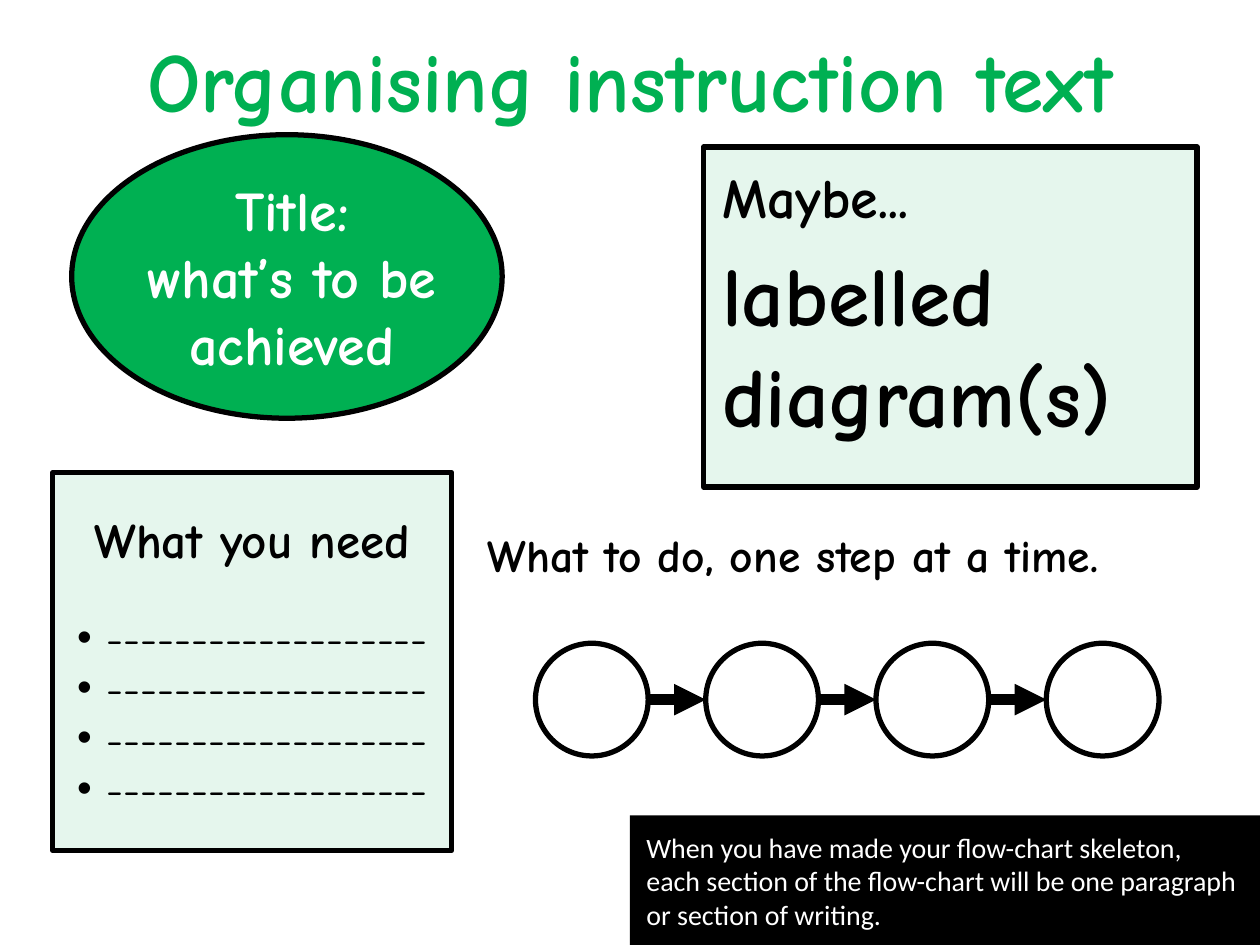
from pptx import Presentation
from pptx.dml.color import RGBColor
from pptx.enum.shapes import MSO_CONNECTOR, MSO_SHAPE
from pptx.enum.text import MSO_ANCHOR, PP_ALIGN
from pptx.oxml.ns import qn
from pptx.util import Pt
from lxml.etree import SubElement

GREEN, BLACK, WHITE = "00B052", "000000", "FFFFFF"
COMIC, BODY = "Comic Neue", "Calibri"

TITLE = "Organising instruction text"
NEEDS = ["What you need"] + ["-------------------"] * 4
NEEDS_BOX = (30.2, 270, 228, 216)
PANELS = [
    (MSO_SHAPE.OVAL, (41, 77, 246, 162), GREEN, 100, 3),
    (MSO_SHAPE.RECTANGLE, (402, 84, 282, 194.4), GREEN, 10, 3),
    (MSO_SHAPE.RECTANGLE, (360, 466, 360, 74), BLACK, 100, 0),
]
TEXTS = [
    ((278.6, 301, 427, 31), ["What to do, one step at a time."], [26], COMIC, BLACK, PP_ALIGN.LEFT),
    ((46.8, 100, 240, 115), ["Title:", "what’s to be achieved"], [32, 32], COMIC, WHITE, PP_ALIGN.CENTER),
    ((412.6, 93, 263.5, 162), ["Maybe...", "labelled", "diagram(s)"], [32, 48, 48], COMIC, BLACK, PP_ALIGN.LEFT),
    ((369.4, 474.5, 346, 57.6), ["When you have made your flow-chart skeleton,",
     "each section of the flow-chart will be one paragraph or section of writing."],
     [16, 16], BODY, WHITE, PP_ALIGN.LEFT),
]
STEPS, STEP_LEFT, STEP_TOP, STEP_SIZE, STEP_PITCH = 4, 306, 367.6, 64.4, 97.3


def colour(value):
    return RGBColor.from_string(value)


def points(box):
    return [Pt(length) for length in box]


def add_panel(slide, kind, box, fill, opacity, line_width):
    shape = slide.shapes.add_shape(kind, *points(box))
    shape.shadow.inherit = False
    if fill:
        shape.fill.solid()
        shape.fill.fore_color.rgb = colour(fill)
        if opacity < 100:
            solid = shape.fill._xPr.find(qn("a:solidFill"))
            SubElement(solid[0], qn("a:alpha")).set("val", str(opacity * 1000))
    else:
        shape.fill.background()
    if line_width:
        shape.line.color.rgb = colour(BLACK)
        shape.line.width = Pt(line_width)
    else:
        shape.line.fill.background()
    return shape


def write(text_frame, lines, sizes, font_name, font_colour, alignment):
    text_frame.text = "\n".join(lines)
    for paragraph, size in zip(text_frame.paragraphs, sizes):
        paragraph.alignment = alignment
        for run in paragraph.runs:
            run.font.name = font_name
            run.font.size = Pt(size)
            run.font.bold = font_name == COMIC
            run.font.color.rgb = colour(font_colour)


def add_text(slide, box, *content):
    text_frame = slide.shapes.add_textbox(*points(box)).text_frame
    text_frame.word_wrap = True
    text_frame.margin_left = text_frame.margin_right = 0
    text_frame.margin_top = text_frame.margin_bottom = 0
    write(text_frame, *content)
    return text_frame


def add_needs(slide):
    shape = add_panel(slide, MSO_SHAPE.RECTANGLE, NEEDS_BOX, GREEN, 10, 3)
    text_frame = shape.text_frame
    text_frame.word_wrap = False
    text_frame.vertical_anchor = MSO_ANCHOR.MIDDLE
    write(text_frame, NEEDS, [28] + [24] * 4, COMIC, BLACK, PP_ALIGN.CENTER)
    items = text_frame.paragraphs[1:]
    items[0].line_spacing = 1.85
    for paragraph in items:
        paragraph.runs[0].font.bold = False
        properties = paragraph._p.get_or_add_pPr()
        properties.set("marL", str(Pt(17)))
        properties.set("indent", str(-Pt(17)))
        SubElement(properties, qn("a:buFont")).set("typeface", "Arial")
        SubElement(properties, qn("a:buChar")).set("char", "•")


def add_steps(slide):
    middle = STEP_TOP + STEP_SIZE / 2
    for step in range(STEPS):
        left = STEP_LEFT + step * STEP_PITCH
        if step < STEPS - 1:
            ends = (left + STEP_SIZE, middle, left + STEP_PITCH, middle)
            arrow = slide.shapes.add_connector(MSO_CONNECTOR.STRAIGHT, *points(ends))
            arrow.line.color.rgb = colour(BLACK)
            arrow.line.width = Pt(6)
            SubElement(arrow.line._get_or_add_ln(), qn("a:tailEnd")).set("type", "triangle")
            SubElement(arrow._element.spPr, qn("a:effectLst"))
        add_panel(slide, MSO_SHAPE.OVAL, (left, STEP_TOP, STEP_SIZE, STEP_SIZE), None, 100, 3)


def main():
    """Build the slide on organising instruction text."""
    presentation = Presentation()
    presentation.slide_width, presentation.slide_height = Pt(720), Pt(540)
    slide = presentation.slides.add_slide(presentation.slide_layouts[5])
    title = slide.shapes.title
    title.left, title.top, title.width, title.height = points((36, 0, 648, 90))
    title.text_frame.vertical_anchor = MSO_ANCHOR.MIDDLE
    write(title.text_frame, [TITLE], [48], COMIC, GREEN, PP_ALIGN.CENTER)
    add_needs(slide)
    for panel in PANELS:
        add_panel(slide, *panel)
    frames = [add_text(slide, *text) for text in TEXTS]
    frames[2].paragraphs[1].space_before = Pt(7)
    add_steps(slide)
    presentation.save("out.pptx")


if __name__ == "__main__":
    main()
